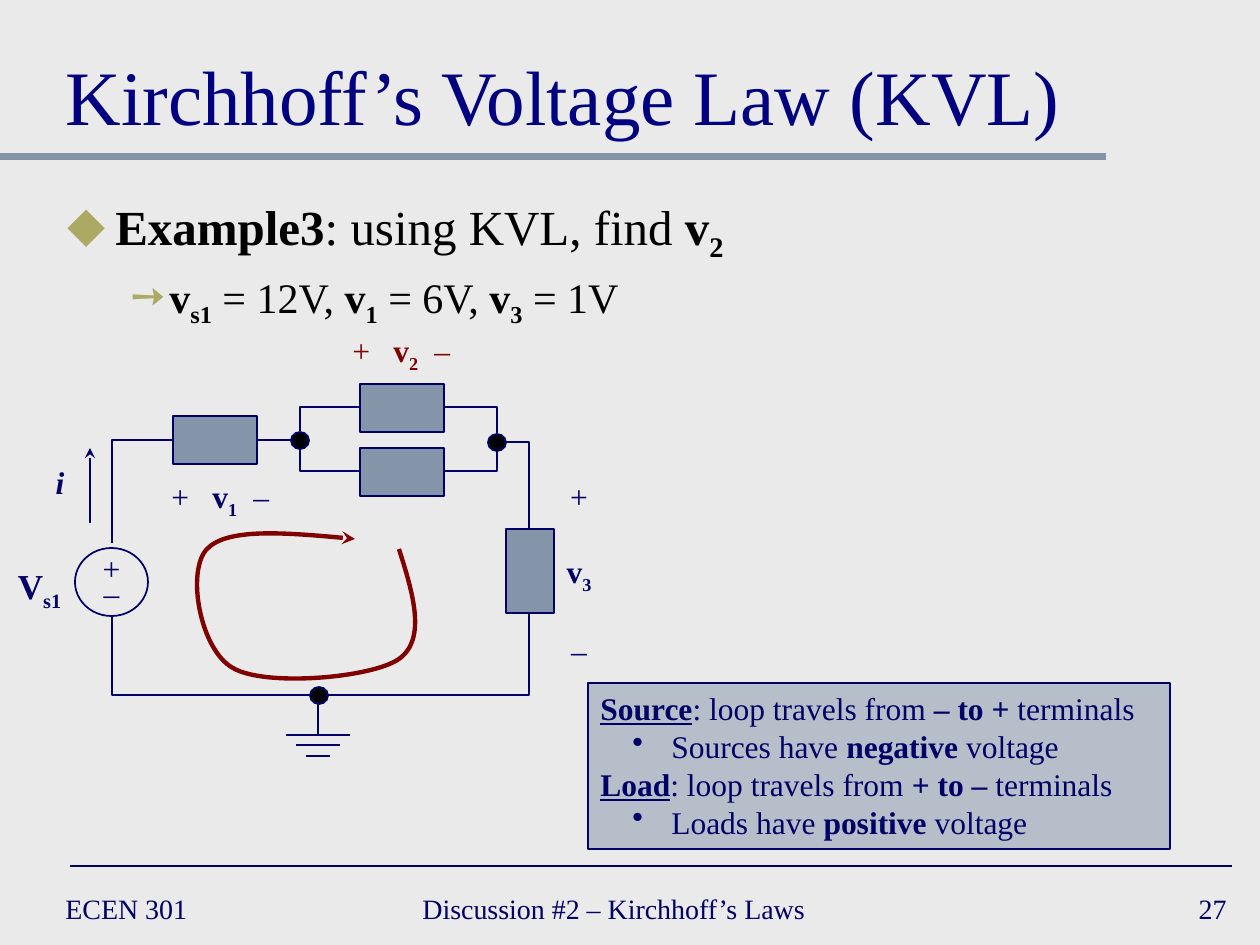
from lxml import etree
from pptx import Presentation
from pptx.dml.color import RGBColor
from pptx.enum.shapes import MSO_CONNECTOR, MSO_SHAPE
from pptx.enum.text import MSO_ANCHOR, PP_ALIGN
from pptx.oxml.ns import qn
from pptx.util import Emu, Pt

LINE, ELBOW = MSO_CONNECTOR.STRAIGHT, MSO_CONNECTOR.ELBOW
RECT, OVAL = MSO_SHAPE.RECTANGLE, MSO_SHAPE.OVAL
LEFT, MID, RIGHT = PP_ALIGN.LEFT, PP_ALIGN.CENTER, PP_ALIGN.RIGHT
TOP, CENTER, BOTTOM = MSO_ANCHOR.TOP, MSO_ANCHOR.MIDDLE, MSO_ANCHOR.BOTTOM
SCALE = 914400 / 126
FONT = "Times New Roman"
COLORS = {"back": "EAEAEA", "navy": "000066", "title": "000080", "steel": "8495A9",
          "red": "800000", "black": "000000", "gold": "ACA964"}


def px(n):
    return Emu(round(n * SCALE))


def rgb(name):
    return RGBColor.from_string(COLORS[name])


def sub(parent, tag, **attrs):
    return etree.SubElement(parent, qn(tag), {k: str(v) for k, v in attrs.items()})


class Board:
    """Holds the drawing style and the current slide."""

    def __init__(self, deck):
        self.slide = deck.slides.add_slide(deck.slide_layouts[5])
        self.shapes = self.slide.shapes
        fill = self.slide.background.fill
        fill.solid()
        fill.fore_color.rgb = rgb("back")

    def stroke(self, item, color="navy", width=1, arrow=False):
        item.line.color.rgb = rgb(color)
        item.line.width = Pt(width)
        if arrow:
            sub(item.line._get_or_add_ln(), "a:tailEnd", type="stealth")

    def wire(self, x1, y1, x2, y2, kind=LINE, **style):
        item = self.shapes.add_connector(kind, px(x1), px(y1), px(x2), px(y2))
        self.stroke(item, **style)
        sub(item._element.spPr, "a:effectLst")
        return item

    def bend(self, x1, y1, x2, y2):
        """Draw a wire that runs across first, then up or down."""
        item = self.wire(x1, y1, x2, y2, ELBOW)
        item._element.spPr.find(qn("a:prstGeom")).set("prst", "bentConnector2")

    def shape(self, kind, x, y, w, h, color=None, alpha=None):
        item = self.shapes.add_shape(kind, px(x), px(y), px(w), px(h))
        item.shadow.inherit = False
        self.stroke(item)
        if color:
            item.fill.solid()
            item.fill.fore_color.rgb = rgb(color)
        else:
            item.fill.background()
        if alpha:
            tint = item._element.spPr.find(qn("a:solidFill"))[0]
            sub(tint, "a:alpha", val=alpha * 1000)
        return item

    def node(self, x, y):
        self.shape(OVAL, x - 9, y - 8, 18, 17, "black")

    def curve(self, points):
        """Draw a chain of cubic curves: a start, then three points for each."""
        pen = self.shapes.build_freeform(px(points[0][0]), px(points[0][1]))
        pen.add_line_segments([(px(x), px(y)) for x, y in points[1:]], close=False)
        item = pen.convert_to_shape()
        item.shadow.inherit = False
        item.fill.background()
        self.stroke(item, "red", 2.5, True)
        track = next(item._element.iter(qn("a:path")))
        legs = track.findall(qn("a:lnTo"))
        for i in range(0, len(legs), 3):
            arc = sub(track, "a:cubicBezTo")
            for leg in legs[i:i + 3]:
                arc.append(leg[0])
                track.remove(leg)

    def frame(self, item, anchor=TOP, wrap=False):
        frame = item.text_frame
        frame.word_wrap = wrap
        frame.vertical_anchor = anchor
        return frame

    def put(self, para, runs, size, color="navy", align=LEFT, gap=0,
            bullet=None, tint=None, left=0, hang=0, tabs=()):
        """Fill a paragraph; marks: b bold, i italic, u underline, s subscript."""
        props = para._p.get_or_add_pPr()
        if bullet:
            props.set("marL", str(px(left)))
            props.set("indent", str(-px(hang)))
            if tint:
                sub(sub(props, "a:buClr"), "a:srgbClr", val=COLORS[tint])
            sub(props, "a:buChar", char=bullet)
        if tabs:
            stops = sub(props, "a:tabLst")
            for stop in tabs:
                sub(stops, "a:tab", pos=px(stop), algn="l")
        para.font.name = FONT
        para.font.size = Pt(size)
        para.font.color.rgb = rgb(color)
        para.alignment = align
        if gap:
            para.space_before = Pt(gap)
        for words, marks in runs:
            run = para.add_run()
            run.text = words
            if "b" in marks:
                run.font.bold = True
            if "i" in marks:
                run.font.italic = True
            if "u" in marks:
                run.font.underline = True
            if "s" in marks:
                run.font._element.set("baseline", "-25000")

    def text(self, x, y, w, h, runs, size=18, anchor=TOP, wrap=False, **style):
        item = self.shapes.add_textbox(px(x), px(y), px(w), px(h))
        frame = self.frame(item, anchor, wrap)
        self.put(frame.paragraphs[0], runs, size, **style)
        return frame

    def title(self, x, y, w, h, words):
        item = self.shapes.title
        item.left, item.top, item.width, item.height = px(x), px(y), px(w), px(h)
        frame = self.frame(item, BOTTOM, True)
        self.put(frame.paragraphs[0], [(words, "")], 44, "title")

    def drop(self, x, y, index, color="navy"):
        """Label a voltage drop from plus to minus."""
        runs = [("+\t", ""), ("v", "b"), (index, "bs"), ("\t–", "")]
        self.text(x, y, 127, 50, runs, color=color, tabs=(41, 82))


def circuit(board):
    board.text(4, 558, 71, 54, [("V", "b"), ("s1", "bs")], 20, align=MID)
    board.shape(OVAL, 75, 548, 73, 68)
    for sign, y in (("+", 543), ("_", 557)):
        board.text(90, y, 43, 50, [(sign, "")], align=MID)
    bends = [(173, 440, 112, 543), (310, 695, 112, 615), (328, 695, 529, 614),
             (360, 407, 300, 431), (360, 471, 300, 448), (444, 407, 497, 433),
             (444, 471, 497, 450), (506, 442, 529, 529)]
    for ends in bends:
        board.bend(*ends)
    board.wire(257, 440, 291, 440)
    board.wire(90, 523, 90, 448, arrow=True)
    board.text(43, 457, 34, 50, [("i", "bi")], align=MID)
    for half, y in ((32, 735), (22, 745), (12, 756)):
        board.wire(318 - half, y, 318 + half, y)
    board.wire(318, 735, 318, 703)
    for x, y in ((300, 440), (319, 695), (497, 442)):
        board.node(x, y)
    for x, y in ((173, 416), (360, 384), (360, 448)):
        board.shape(RECT, x, y, 84, 48, "steel")
    board.shape(RECT, 506, 529, 48, 84, "steel")
    board.drop(159, 471, "1")
    board.drop(340, 325, "2", "red")
    frame = board.text(553, 471, 52, 202, [("+", "")], align=MID)
    for runs in ([("v", "b"), ("3", "bs")], [("–", "")]):
        board.put(frame.add_paragraph(), runs, 18, align=MID, gap=21)
    board.curve([(399, 549), (413, 593), (427, 639), (399, 659), (372, 678),
                 (265, 687), (233, 668), (200, 650), (186, 571), (207, 549),
                 (227, 528), (291, 533), (355, 539)])


def rules(board):
    item = board.shape(RECT, 588, 683, 582, 166, "steel", 50)
    frame = board.frame(item, wrap=True)
    para = frame.paragraphs[0]
    for name, way, kind in (("Source", "– to +", "negative"), ("Load", "+ to –", "positive")):
        if name == "Load":
            para = frame.add_paragraph()
        board.put(para, [(name, "bu"), (": loop travels from ", ""),
                         (way, "b"), (" terminals", "")], 18)
        board.put(frame.add_paragraph(), [(name + "s have ", ""), (kind, "b"), (" voltage", "")],
                  18, bullet="•", left=71, hang=39)


def main():
    deck = Presentation()
    deck.slide_width, deck.slide_height = px(1260), px(945)
    board = Board(deck)
    board.wire(0, 157, 1106, 157, color="steel", width=4)
    board.wire(70, 866, 1232, 866)
    for x, w, words, align in ((53, 273, "ECEN 301", LEFT),
                               (410, 483, "Discussion #2 – Kirchhoff’s Laws", LEFT),
                               (977, 262, "27", RIGHT)):
        board.text(x, 882, w, 53, [(words, "")], 16, CENTER, True, align=align)
    board.title(53, 21, 1155, 126, "Kirchhoff’s Voltage Law (KVL)")
    frame = board.text(55, 190, 1047, 188,
                       [("Example3", "b"), (": using KVL, find ", ""), ("v", "b"), ("2", "bs")],
                       28, wrap=True, color="black", bullet="◆", tint="gold", left=48, hang=48)
    given = []
    for index, value in (("s1", " = 12V, "), ("1", " = 6V, "), ("3", " = 1V")):
        given += [("v", "b"), (index, "bs"), (value, "")]
    board.put(frame.add_paragraph(), given, 24, "black", gap=4.8,
              bullet="➙", tint="gold", left=102, hang=39)
    circuit(board)
    rules(board)
    deck.save("out.pptx")


if __name__ == "__main__":
    main()
